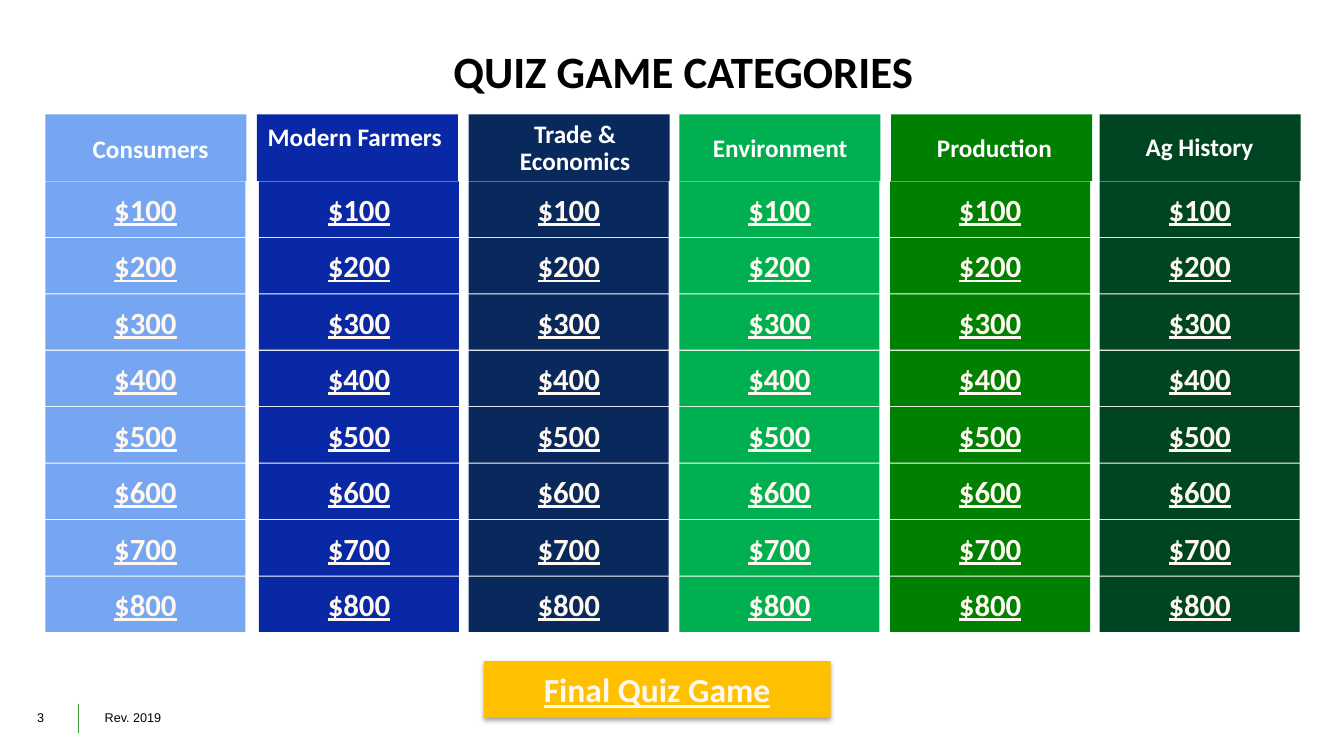
from lxml import etree
from pptx import Presentation
from pptx.dml.color import RGBColor
from pptx.enum.shapes import MSO_CONNECTOR, MSO_SHAPE
from pptx.enum.text import MSO_ANCHOR, MSO_AUTO_SIZE, PP_ALIGN
from pptx.oxml.ns import qn
from pptx.util import Pt

RECTANGLE = MSO_SHAPE.RECTANGLE
STRAIGHT = MSO_CONNECTOR.STRAIGHT
TOP, MIDDLE = MSO_ANCHOR.TOP, MSO_ANCHOR.MIDDLE
NO_AUTOFIT = MSO_AUTO_SIZE.NONE
CENTER, LEFT = PP_ALIGN.CENTER, PP_ALIGN.LEFT

CREAM, WHITE, BLACK = "FFF8F0", "FFFFFF", "000000"
HEADER_TOP, HEADER_WIDTH, HEADER_HEIGHT = 81.7, 143.6, 47.5
PRICE_TOP, PRICE_PITCH, PRICE_WIDTH, PRICE_HEIGHT = 129.6, 40.32, 142.9, 39.6
PRICES = [f"${value}" for value in range(100, 900, 100)]

# Name, colour, header left, price left, label (left, top, width, height)
CATEGORIES = [
    ("Consumers", "76A6F2", 32.4, 32.4, (40.3, 94.3, 134.6, 26.6)),
    ("Modern Farmers", "0828A6", 183.6, 185, (180.7, 85.7, 145.4, 46.8)),
    ("Trade & Economics", "09295C", 334.8, 334.8, (352.1, 83.5, 117.4, 46.8)),
    ("Environment", "00B050", 485.3, 485.3, (488.2, 93.6, 138.2, 26.6)),
    ("Production", "008000", 636.5, 635.8, (651.6, 93.6, 117.4, 26.6)),
    ("Ag History", "004522", 785.5, 785.5, (799.2, 92.9, 115.2, 26.6)),
]


def color(hex_code):
    return RGBColor.from_string(hex_code)


def write(shape, text, size, hex_code, font="Calibri", bold=True,
          underline=False, align=CENTER):
    """Put one formatted paragraph in a shape and return it."""
    para = shape.text_frame.paragraphs[0]
    para.text = text
    para.alignment = align
    for span in para.runs:
        span.font.name = font
        span.font.size = Pt(size)
        span.font.bold = bold
        span.font.underline = underline
        span.font.color.rgb = color(hex_code)
    return para


def add_rectangle(slide, left, top, width, height, fill):
    box = slide.shapes.add_shape(RECTANGLE, Pt(left), Pt(top), Pt(width), Pt(height))
    box.fill.solid()
    box.fill.fore_color.rgb = color(fill)
    box.line.fill.background()
    box.shadow.inherit = False
    box.text_frame.vertical_anchor = MIDDLE
    return box


def add_text(slide, left, top, width, height):
    box = slide.shapes.add_textbox(Pt(left), Pt(top), Pt(width), Pt(height))
    box.text_frame.word_wrap = True
    return box


def add_soft_shadow(shape):
    effects = shape._element.spPr.find(qn("a:effectLst"))
    shadow = etree.SubElement(effects, qn("a:outerShdw"), blurRad=str(Pt(3.1)),
                              dist=str(Pt(1.8)), dir="5400000", rotWithShape="0")
    tint = etree.SubElement(shadow, qn("a:srgbClr"), val=BLACK)
    etree.SubElement(tint, qn("a:alpha"), val="35000")


def add_title(slide, text):
    title = slide.shapes.title
    title.left, title.top, title.width, title.height = Pt(25.9), Pt(31), Pt(924.5), Pt(67)
    frame = title.text_frame
    frame.margin_left = frame.margin_top = frame.margin_right = frame.margin_bottom = 0
    frame.vertical_anchor = TOP
    frame.auto_size = NO_AUTOFIT
    write(title, text, 32, BLACK)


def add_category(slide, name, fill, header_left, price_left, label_area):
    add_rectangle(slide, header_left, HEADER_TOP, HEADER_WIDTH, HEADER_HEIGHT, fill)
    for row, price in enumerate(PRICES):
        box = add_rectangle(slide, price_left, PRICE_TOP + row * PRICE_PITCH,
                            PRICE_WIDTH, PRICE_HEIGHT, fill)
        box.text_frame.word_wrap = False
        write(box, price, 22, CREAM, underline=True)
    label = add_text(slide, *label_area)
    write(label, name, 18, WHITE).line_spacing = 0.9


def add_footer(slide):
    for text, left, width in (("3", 19.4, 35.3), ("Rev. 2019", 67.7, 56.2)):
        box = add_text(slide, left, 503.3, width, 18)
        write(box, text, 9, BLACK, font="Arial", bold=False, align=LEFT)
    divider = slide.shapes.add_connector(STRAIGHT, Pt(55.8), Pt(502.6), Pt(55.8), Pt(523.4))
    divider.line.color.rgb = color("40A035")
    divider.line.width = Pt(0.25)
    etree.SubElement(divider._element.spPr, qn("a:effectLst"))


def main():
    deck = Presentation()
    deck.slide_width, deck.slide_height = Pt(960), Pt(540)
    slide = deck.slides.add_slide(deck.slide_layouts[5])

    # Title and footer
    add_title(slide, "QUIZ GAME CATEGORIES")
    add_footer(slide)

    # Final round button
    button = add_rectangle(slide, 345.6, 472.3, 247.7, 40.3, "FFC000")
    add_soft_shadow(button)
    write(button, "Final Quiz Game", 24, CREAM, underline=True)

    # Game board
    for category in CATEGORIES:
        add_category(slide, *category)

    deck.save("out.pptx")


if __name__ == "__main__":
    main()
